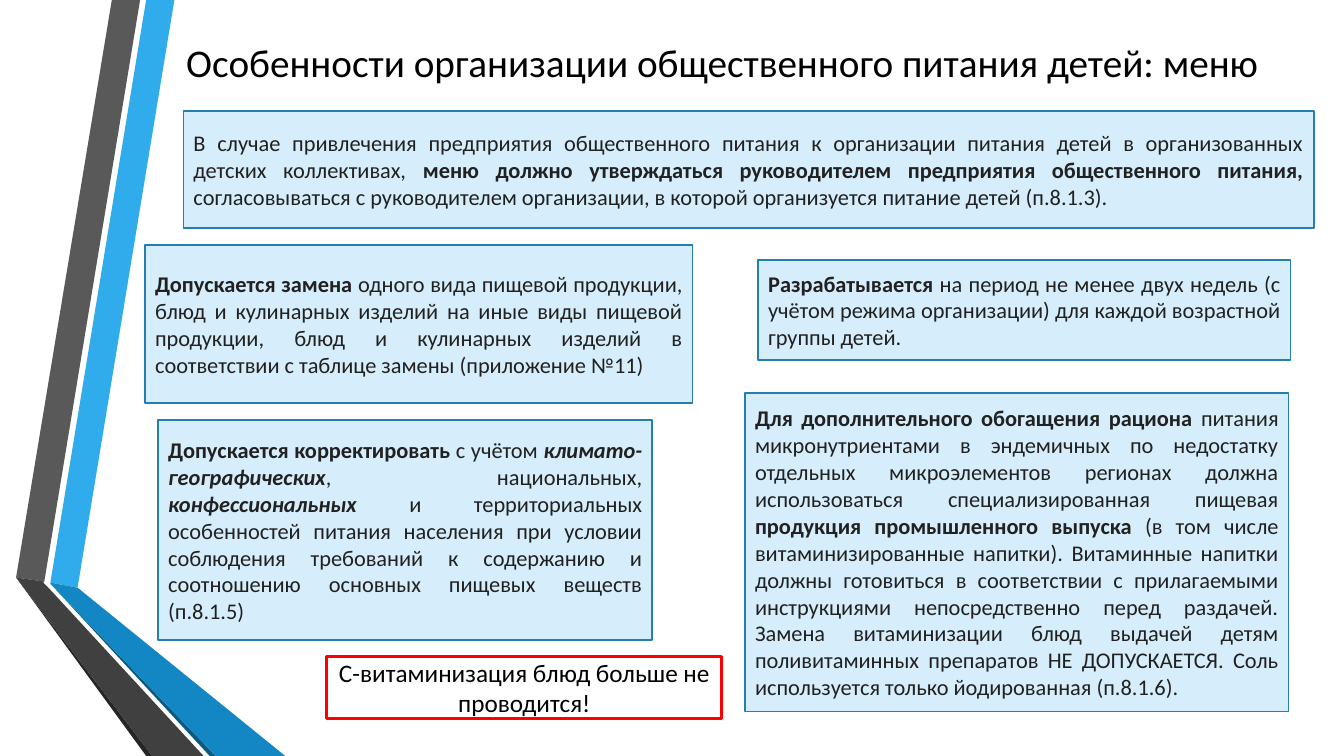
from pptx import Presentation
from pptx.dml.color import RGBColor
from pptx.enum import shapes, text
from pptx.util import Inches, Pt

FONT = "Calibri"
BLACK = RGBColor(0x00, 0x00, 0x00)
WHITE = RGBColor(0xFF, 0xFF, 0xFF)
RED = RGBColor(0xFF, 0x00, 0x00)
INK = RGBColor(0x21, 0x21, 0x21)
PALE_BLUE = RGBColor(0xD6, 0xEE, 0xFB)
EDGE_BLUE = RGBColor(0x24, 0x7F, 0xAF)
BLUE = RGBColor(0x30, 0xAC, 0xEC)
FOLD_BLUE = RGBColor(0x12, 0x87, 0xC3)
DEEP_BLUE = RGBColor(0x0C, 0x5A, 0x82)
GREY = RGBColor(0x59, 0x59, 0x59)
FOLD_GREY = RGBColor(0x40, 0x40, 0x40)
DEEP_GREY = RGBColor(0x26, 0x26, 0x26)

# Run styles: (bold, italic)
PLAIN, BOLD, BOLD_ITALIC = (False, False), (True, False), (True, True)

# Ribbon facets, in inches from the ribbon's top left corner
RIBBON_FACETS = [
    (BLUE, [(0.34, 5.78), (0.61, 5.83), (1.57, 0), (1.29, 0)]),
    (GREY, [(1.23, 0), (0.95, 0), (0, 5.73), (0.28, 5.77)]),
    (DEEP_GREY, [(0, 5.73), (1.29, 7.5), (1.35, 7.5)]),
    (DEEP_BLUE, [(0.34, 5.79), (1.92, 7.5), (1.98, 7.5)]),
    (FOLD_BLUE, [(0.34, 5.79), (1.98, 7.5), (2.67, 7.5), (0.61, 5.83), (0.34, 5.78)]),
    (FOLD_GREY, [(1.86, 7.5), (0.32, 5.83), (0.27, 5.78), (0.28, 5.77),
                 (0, 5.73), (1.35, 7.5)]),
]

# Menu rules: box (left, top, width, height) and styled runs
MENU_RULES = [
    ((1.82, 1.1, 11.21, 1.16), [
        ("В случае привлечения предприятия общественного питания к организации "
         "питания детей в организованных детских коллективах, ", PLAIN),
        ("меню должно утверждаться руководителем предприятия общественного питания, ", BOLD),
        ("согласовываться с руководителем организации, в которой организуется "
         "питание детей (п.8.1.3).", PLAIN)]),
    ((7.52, 2.58, 5.28, 0.99), [
        ("Разрабатывается", BOLD),
        (" на период не менее двух недель (с учётом режима организации) "
         "для каждой возрастной группы детей.", PLAIN)]),
    ((1.44, 2.43, 5.43, 1.57), [
        ("Допускается замена ", BOLD),
        ("одного вида пищевой продукции, блюд и кулинарных изделий на иные виды "
         "пищевой продукции, блюд и кулинарных изделий в соответствии с таблице "
         "замены (приложение №11)", PLAIN)]),
    ((1.57, 4.17, 4.9, 2.18), [
        ("Допускается корректировать", BOLD),
        (" с учётом ", PLAIN),
        ("климато-географических", BOLD_ITALIC),
        (", национальных, ", PLAIN),
        ("конфессиональных", BOLD_ITALIC),
        (" и территориальных особенностей питания населения при условии соблюдения "
         "требований к содержанию и соотношению основных пищевых веществ (п.8.1.5)",
         PLAIN)]),
    ((7.39, 3.9, 5.39, 3.16), [
        ("Для дополнительного обогащения рациона ", BOLD),
        ("питания микронутриентами в эндемичных по недостатку отдельных "
         "микроэлементов регионах должна использоваться специализированная "
         "пищевая ", PLAIN),
        ("продукция промышленного выпуска ", BOLD),
        ("(в том числе витаминизированные напитки). Витаминные напитки должны "
         "готовиться в соответствии с прилагаемыми инструкциями непосредственно "
         "перед раздачей. Замена витаминизации блюд выдачей детям поливитаминных "
         "препаратов НЕ ДОПУСКАЕТСЯ. Соль используется только йодированная "
         "(п.8.1.6).", PLAIN)]),
]


def write(shape, runs, size, color, align):
    """Fill a shape with one vertically centred paragraph of styled runs."""
    frame = shape.text_frame
    frame.word_wrap = True
    frame.vertical_anchor = text.MSO_ANCHOR.MIDDLE
    paragraph = frame.paragraphs[0]
    paragraph.alignment = align
    paragraph.font.name = FONT
    paragraph.font.size = Pt(size)
    paragraph.font.color.rgb = color
    for words, (bold, italic) in runs:
        run = paragraph.add_run()
        run.text = words
        if bold:
            run.font.bold = True
        if italic:
            run.font.italic = True


def add_ribbon(slide, left, top):
    """Folded two-colour ribbon along the left edge."""
    for color, corners in RIBBON_FACETS:
        points = [(Inches(left + x), Inches(top + y)) for x, y in corners]
        outline = slide.shapes.build_freeform(*points[0])
        outline.add_line_segments(points[1:], close=True)
        facet = outline.convert_to_shape()
        facet.shadow.inherit = False
        facet.fill.solid()
        facet.fill.fore_color.rgb = color
        facet.line.fill.background()


def add_title(slide, box, words):
    title = slide.shapes.add_textbox(*map(Inches, box))
    write(title, [(words, PLAIN)], 28, BLACK, text.PP_ALIGN.CENTER)


def add_panel(slide, box, fill, edge, edge_width):
    panel = slide.shapes.add_shape(shapes.MSO_SHAPE.RECTANGLE, *map(Inches, box))
    panel.shadow.inherit = False
    panel.fill.solid()
    panel.fill.fore_color.rgb = fill
    panel.line.color.rgb = edge
    panel.line.width = Pt(edge_width)
    return panel


def add_rule(slide, box, runs):
    rule = add_panel(slide, box, PALE_BLUE, EDGE_BLUE, 1.25)
    write(rule, runs, 16, INK, text.PP_ALIGN.JUSTIFY)


def add_warning(slide, box, words):
    warning = add_panel(slide, box, WHITE, RED, 2.25)
    write(warning, [(words, PLAIN)], 18, BLACK, text.PP_ALIGN.CENTER)


def main():
    deck = Presentation()
    deck.slide_width, deck.slide_height = Inches(13.33), Inches(7.5)
    slide = deck.slides.add_slide(deck.slide_layouts[6])

    add_ribbon(slide, 0.16, 0)
    add_title(slide, (1.57, 0.29, 11.18, 0.65),
              "Особенности организации общественного питания детей: меню")
    for box, runs in MENU_RULES:
        add_rule(slide, box, runs)
    add_warning(slide, (3.24, 6.51, 3.92, 0.62),
                "С-витаминизация блюд больше не проводится!")

    deck.save("out.pptx")


if __name__ == "__main__":
    main()
